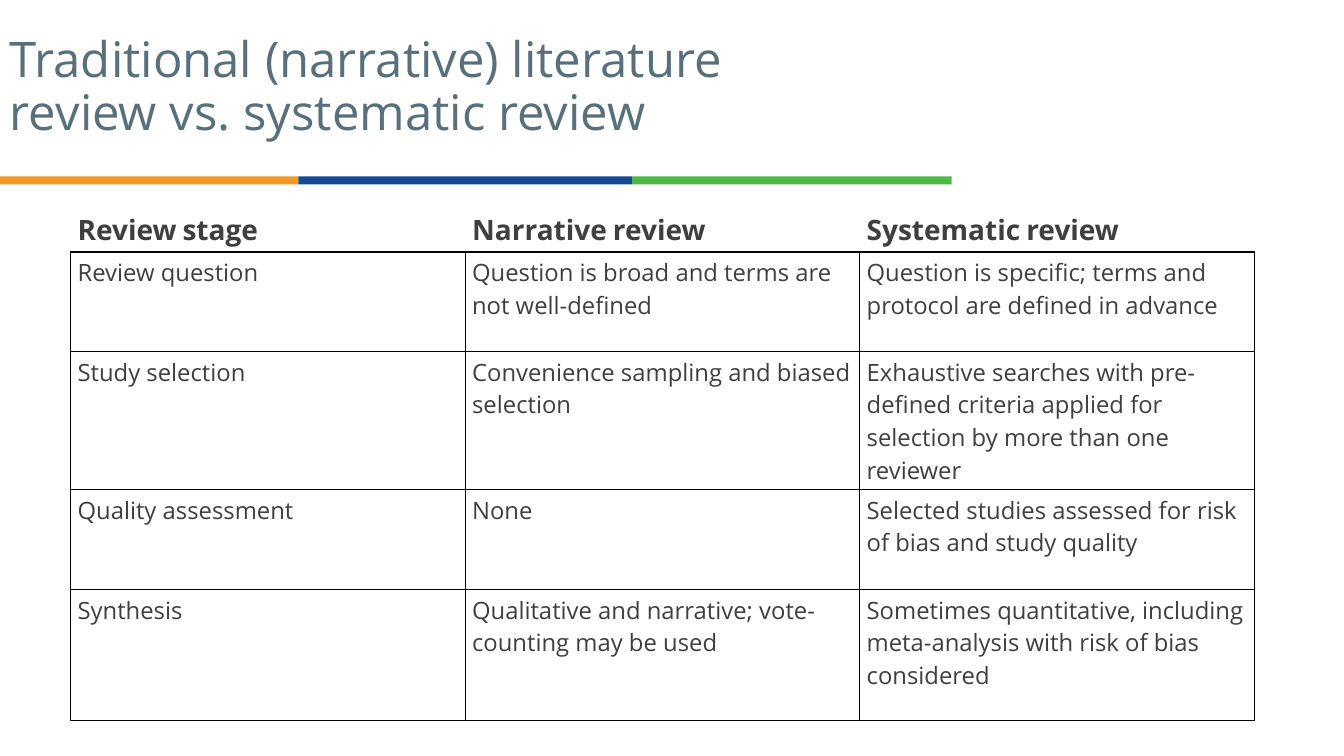
from lxml import etree
from pptx import Presentation
from pptx import util as u
from pptx.dml.color import RGBColor
from pptx.enum import shapes, text
from pptx.oxml import ns

COLORS = {
    "title": "586F7C", "body": "3F3F3F", "border": "000000",
    "orange": "F49925", "blue": "154A90", "green": "4EB748",
}
FONT = "Open Sans"
STAGES = [
    ("Review question", "Question is broad and terms are not well-defined",
     "Question is specific; terms and protocol are defined in advance"),
    ("Study selection", "Convenience sampling and biased selection",
     "Exhaustive searches with pre-defined criteria applied for selection "
     "by more than one reviewer"),
    ("Quality assessment", "None",
     "Selected studies assessed for risk of bias and study quality"),
    ("Synthesis", "Qualitative and narrative; vote-counting may be used",
     "Sometimes quantitative, including meta-analysis with risk of bias considered"),
]
HEADINGS = [("Review", "stage"), ("Narrative", "review"), ("Systematic", "review")]
ROW_HEIGHTS = [0.45, 0.99, 1.37, 0.99, 1.3]


def add_span(para, words, size, color="body", bold=False):
    span = para.add_run()
    span.text = words
    span.font.name = FONT
    span.font.size = u.Pt(size)
    span.font.bold = bold
    span.font.color.rgb = RGBColor.from_string(COLORS[color])


def set_margins(holder, side, end):
    holder.margin_left = holder.margin_right = u.Inches(side)
    holder.margin_top = holder.margin_bottom = u.Inches(end)


def set_borders(cell, visible):
    """Draw the named sides (of L, R, T, B) and clear the others."""
    properties = cell._tc.get_or_add_tcPr()
    for side in "LRTB":
        line = etree.SubElement(properties, ns.qn(f"a:ln{side}"), w=str(u.Pt(1)))
        if side in visible:
            fill = etree.SubElement(line, ns.qn("a:solidFill"))
            etree.SubElement(fill, ns.qn("a:srgbClr"), val=COLORS["border"])
        else:
            etree.SubElement(line, ns.qn("a:noFill"))


def add_title(page, left, top, width, height, lines):
    box = page.shapes.add_textbox(*map(u.Inches, (left, top, width, height)))
    frame = box.text_frame
    frame.word_wrap = True
    frame.vertical_anchor = text.MSO_ANCHOR.MIDDLE
    set_margins(frame, 0.1, 0.05)
    para = frame.paragraphs[0]
    para.line_spacing = 0.9
    for index, line in enumerate(lines):
        if index:
            para.add_line_break()
        add_span(para, line, 35, "title")


def add_color_rule(page, left, top, height, segments):
    for color, width in segments:
        bar = page.shapes.add_shape(
            shapes.MSO_SHAPE.RECTANGLE, *map(u.Inches, (left, top, width, height)))
        bar.shadow.inherit = False
        bar.fill.solid()
        bar.fill.fore_color.rgb = RGBColor.from_string(COLORS[color])
        bar.line.fill.background()
        left += width


def add_comparison(page, left, top, width):
    frame = page.shapes.add_table(
        len(ROW_HEIGHTS), len(HEADINGS),
        *map(u.Inches, (left, top, width, sum(ROW_HEIGHTS))))
    table = frame.table
    table.first_row = table.horz_banding = False
    for row, height in zip(table.rows, ROW_HEIGHTS):
        row.height = u.Inches(height)
    for column in table.columns:
        column.width = u.Inches(width / len(HEADINGS))

    for r, entries in enumerate([HEADINGS, *STAGES]):
        for c, entry in enumerate(entries):
            cell = table.cell(r, c)
            set_margins(cell, 0.07, 0.04)
            set_borders(cell, "LRTB" if r else "B")
            cell.fill.background()
            para = cell.text_frame.paragraphs[0]
            if r:
                add_span(para, entry, 17)
            else:
                first, second = entry
                for words, size in ((first, 20), (" ", 16), (second, 20)):
                    add_span(para, words, size, bold=True)


def main():
    deck = Presentation()
    deck.slide_width, deck.slide_height = u.Inches(13.33), u.Inches(7.5)
    page = deck.slides.add_slide(deck.slide_layouts[6])
    # Coloured rule under the heading
    add_color_rule(page, 0, 1.75, 0.08,
                   [("orange", 2.96), ("blue", 3.31), ("green", 3.17)])
    # Heading
    add_title(page, 0, 0.28, 10.51, 1.18,
              ["Traditional (narrative) literature", "review vs. systematic review"])
    # Comparison table
    add_comparison(page, 0.7, 2.05, 11.74)
    deck.save("out.pptx")


if __name__ == "__main__":
    main()
